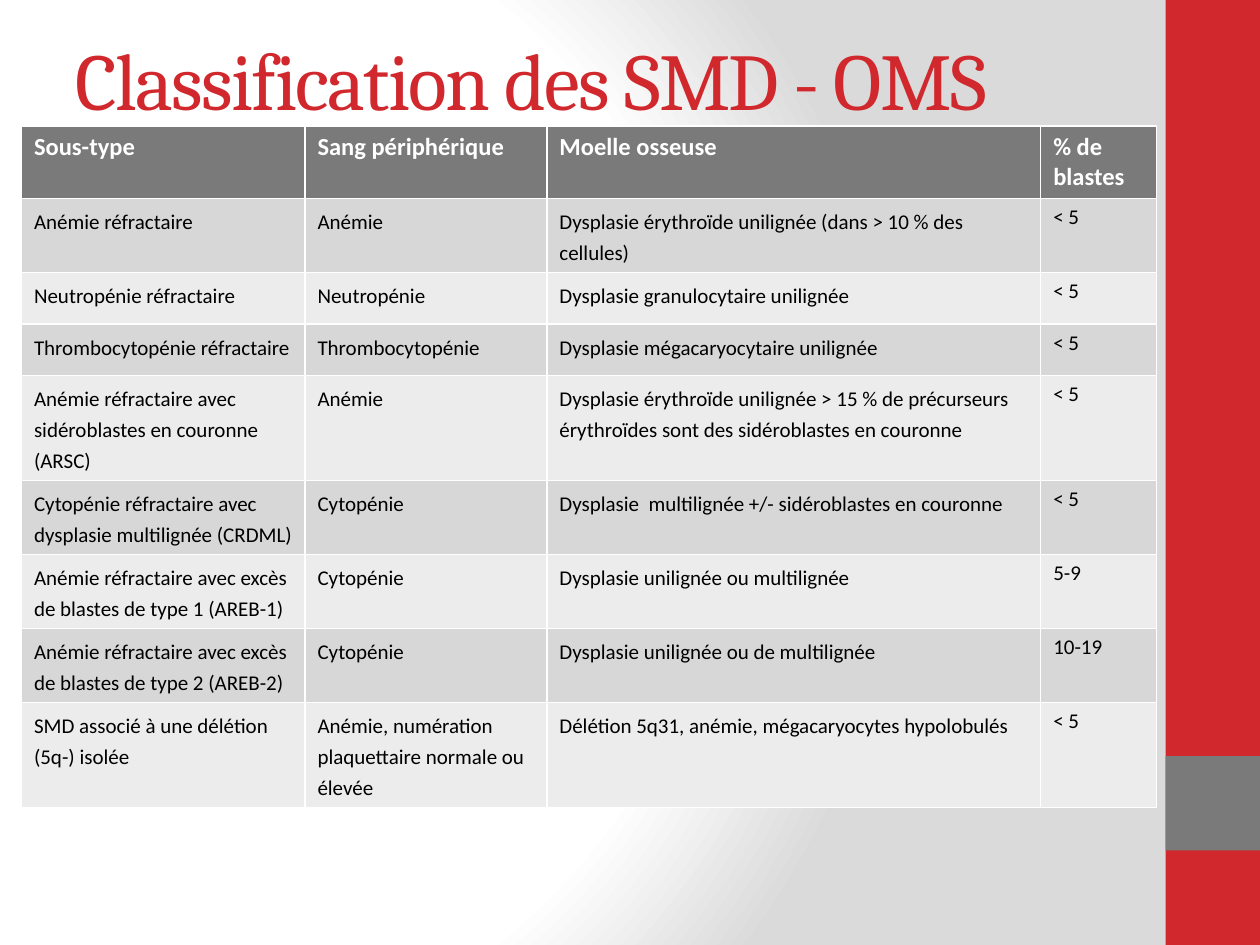
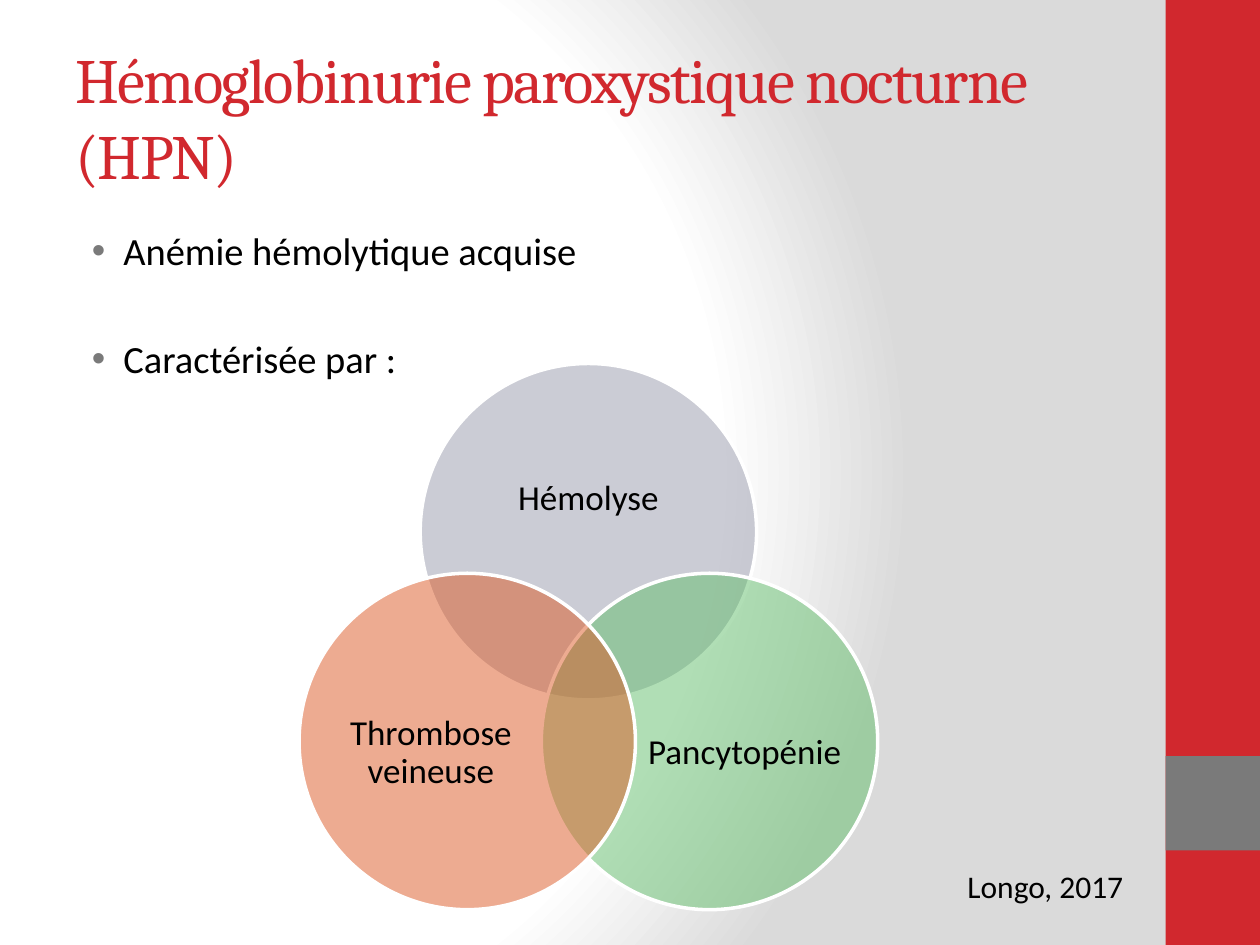
"""Build two haematology slides: the SMD classification table and the HPN overview."""
import math

from pptx import Presentation
from pptx.dml.color import RGBColor
from pptx.enum import shapes, text
from pptx.oxml import parse_xml
from pptx.oxml import ns
from pptx.util import Inches, Pt

RED = RGBColor(0xD1, 0x28, 0x2E)
GREY = RGBColor(0x7A, 0x7A, 0x7A)
WHITE = RGBColor(0xFF, 0xFF, 0xFF)
BLACK = RGBColor(0x00, 0x00, 0x00)
ROW_FILLS = (RGBColor(0xD7, 0xD7, 0xD7), RGBColor(0xEC, 0xEC, 0xEC))
LAVENDER = RGBColor(0x98, 0x9A, 0xAC)
GREEN = RGBColor(0x63, 0xBF, 0x6C)
ORANGE = RGBColor(0xDC, 0x59, 0x24)
BACKDROP_STOPS = ((0, WHITE), (75, WHITE), (100, RGBColor(0xDA, 0xDA, 0xDA)))

HEADING_FONT, BODY_FONT = "Cambria", "Calibri"
TITLE_ONLY, TITLE_AND_BODY = 5, 1

BANDS = ((0, 7.5, RED), (6, 0.75, GREY))

SMD_TITLE = "Classification des SMD - OMS"
SMD_HEADER = ("Sous-type", "Sang périphérique", "Moelle osseuse", "% de blastes")
SMD_WIDTHS = (2.25, 1.92, 3.92, 0.92)
SMD_ROW_HEIGHT = 0.41
SMD_ROWS = (
    ("Anémie réfractaire", "Anémie",
     "Dysplasie érythroïde unilignée (dans > 10 % des cellules)", "< 5"),
    ("Neutropénie réfractaire", "Neutropénie",
     "Dysplasie granulocytaire unilignée", "< 5"),
    ("Thrombocytopénie réfractaire", "Thrombocytopénie",
     "Dysplasie mégacaryocytaire unilignée", "< 5"),
    ("Anémie réfractaire avec sidéroblastes en couronne (ARSC)", "Anémie",
     "Dysplasie érythroïde unilignée > 15 % de précurseurs érythroïdes "
     "sont des sidéroblastes en couronne", "< 5"),
    ("Cytopénie réfractaire avec dysplasie multilignée (CRDML)", "Cytopénie",
     "Dysplasie  multilignée +/- sidéroblastes en couronne", "< 5"),
    ("Anémie réfractaire avec excès de blastes de type 1 (AREB-1)", "Cytopénie",
     "Dysplasie unilignée ou multilignée", "5-9"),
    ("Anémie réfractaire avec excès de blastes de type 2 (AREB-2)", "Cytopénie",
     "Dysplasie unilignée ou de multilignée", "10-19"),
    ("SMD associé à une délétion (5q-) isolée",
     "Anémie, numération plaquettaire normale ou élevée",
     "Délétion 5q31, anémie, mégacaryocytes hypolobulés", "< 5"),
)

HPN_TITLE = "Hémoglobinurie paroxystique nocturne (HPN)"
HPN_POINTS = (("Anémie hémolytique acquise", 5.3), ("Caractérisée par :", 35.5))
HPN_SOURCE = "Longo, 2017"
VENN_CENTRE, VENN_RADIUS, VENN_DIAMETER = (4.67, 5.33), 1.11, 2.67
VENN = (
    ("Hémolyse", LAVENDER, -90, (3.69, 3.36, 1.96, 1.2)),
    ("Pancytopénie", GREEN, 30, (5.11, 5.24, 1.6, 1.47)),
    ("Thrombose veineuse", ORANGE, 150, (2.62, 5.24, 1.6, 1.47)),
)


def inches(*lengths):
    return [Inches(length) for length in lengths]


def place(box, *frame):
    box.left, box.top, box.width, box.height = inches(*frame)


def style(para, size, colour=BLACK, name=BODY_FONT, bold=False):
    para.font.size, para.font.name, para.font.bold = Pt(size), name, bold
    para.font.color.rgb = colour


def paint_backdrop(deck):
    master = deck.slide_master
    master.background.fill.solid()
    stops = "".join(f'<a:gs pos="{at * 1000}"><a:srgbClr val="{colour}"/></a:gs>'
                    for at, colour in BACKDROP_STOPS)
    properties = master._element.find(".//" + ns.qn("p:bgPr"))
    properties.replace(properties[0], parse_xml(
        f'<a:gradFill {ns.nsdecls("a")} rotWithShape="1"><a:gsLst>{stops}</a:gsLst>'
        '<a:path path="circle"><a:fillToRect l="20000" t="50000" r="100000" b="50000"/>'
        '</a:path></a:gradFill>'))


def add_filled(holder, kind, frame, colour):
    shape = holder.add_shape(kind, *inches(*frame))
    shape.shadow.inherit = False
    shape.fill.solid()
    shape.fill.fore_color.rgb = colour
    shape.line.fill.background()
    return shape


def add_page(deck, layout, title, size, frame):
    page = deck.slides.add_slide(deck.slide_layouts[layout])
    for top, height, colour in BANDS:
        add_filled(page.shapes, shapes.MSO_SHAPE.RECTANGLE, (9.25, top, 0.75, height), colour)
    box = page.shapes.title
    place(box, *frame)
    box.text_frame.text = title
    box.text_frame.auto_size = text.MSO_AUTO_SIZE.NONE
    box.text_frame.vertical_anchor = text.MSO_ANCHOR.MIDDLE
    para = box.text_frame.paragraphs[0]
    para.alignment = text.PP_ALIGN.LEFT
    style(para, size, RED, HEADING_FONT)
    para.runs[0]._r.get_or_add_rPr().set("spc", "-100")
    return page


def add_smd_table(page):
    rows = (SMD_HEADER,) + SMD_ROWS
    frame = inches(0.17, 1, sum(SMD_WIDTHS), SMD_ROW_HEIGHT * len(rows))
    table = page.shapes.add_table(len(rows), len(SMD_WIDTHS), *frame).table
    for column, width in zip(table.columns, SMD_WIDTHS):
        column.width = Inches(width)
    for r, row in enumerate(rows):
        for c, wording in enumerate(row):
            cell = table.cell(r, c)
            cell.text = wording
            cell.fill.solid()
            para = cell.text_frame.paragraphs[0]
            if r == 0:
                cell.fill.fore_color.rgb = GREY
                style(para, 14, WHITE, bold=True)
                continue
            cell.fill.fore_color.rgb = ROW_FILLS[(r - 1) % 2]
            style(para, 12)
            if c < len(row) - 1:
                para.line_spacing, para.space_before = 1.2, Pt(5)


def add_points(page):
    body = page.placeholders[1]
    place(body, 0.5, 1.75, 8.33, 5.25)
    frame = body.text_frame
    frame.auto_size = text.MSO_AUTO_SIZE.NONE
    frame.text = "\n".join(wording for wording, _ in HPN_POINTS)
    for para, (_, gap) in zip(frame.paragraphs, HPN_POINTS):
        para.space_before = Pt(gap)
        properties = para._p.get_or_add_pPr()
        properties.set("marL", str(Inches(0.38)))
        properties.set("indent", str(Inches(-0.25)))
        properties.append(parse_xml(
            f'<a:buClr {ns.nsdecls("a")}><a:srgbClr val="{GREY}"/></a:buClr>'))
        style(para, 22)


def add_venn(page):
    group = page.shapes.add_group_shape().shapes
    for wording, colour, angle, label_frame in VENN:
        turn = math.radians(angle)
        left = VENN_CENTRE[0] + VENN_RADIUS * math.cos(turn) - VENN_DIAMETER / 2
        top = VENN_CENTRE[1] + VENN_RADIUS * math.sin(turn) - VENN_DIAMETER / 2
        circle = add_filled(group, shapes.MSO_SHAPE.OVAL,
                            (left, top, VENN_DIAMETER, VENN_DIAMETER), colour)
        tint = circle._element.spPr.find(".//" + ns.qn("a:srgbClr"))
        tint.append(parse_xml(f'<a:alpha {ns.nsdecls("a")} val="50000"/>'))
        circle.line.color.rgb = WHITE
        circle.line.width = Pt(2)

        frame = group.add_textbox(*inches(*label_frame)).text_frame
        frame.word_wrap = True
        frame.vertical_anchor = text.MSO_ANCHOR.MIDDLE
        frame.margin_left = frame.margin_right = frame.margin_top = frame.margin_bottom = 0
        frame.text = wording
        para = frame.paragraphs[0]
        para.alignment, para.line_spacing = text.PP_ALIGN.CENTER, 0.9
        style(para, 20)


def add_citation(page):
    frame = page.shapes.add_textbox(*inches(7.58, 6.83, 1.67, 0.4)).text_frame
    frame.word_wrap = True
    frame.text = HPN_SOURCE
    style(frame.paragraphs[0], 18)


def main():
    deck = Presentation()
    deck.slide_width, deck.slide_height = inches(10, 7.5)
    paint_backdrop(deck)

    add_smd_table(add_page(deck, TITLE_ONLY, SMD_TITLE, 46, (0.5, 0, 9, 1.25)))

    page = add_page(deck, TITLE_AND_BODY, HPN_TITLE, 36, (0.5, 0.3, 8.33, 1.25))
    add_points(page)
    add_venn(page)
    add_citation(page)

    deck.save("out.pptx")


if __name__ == "__main__":
    main()
